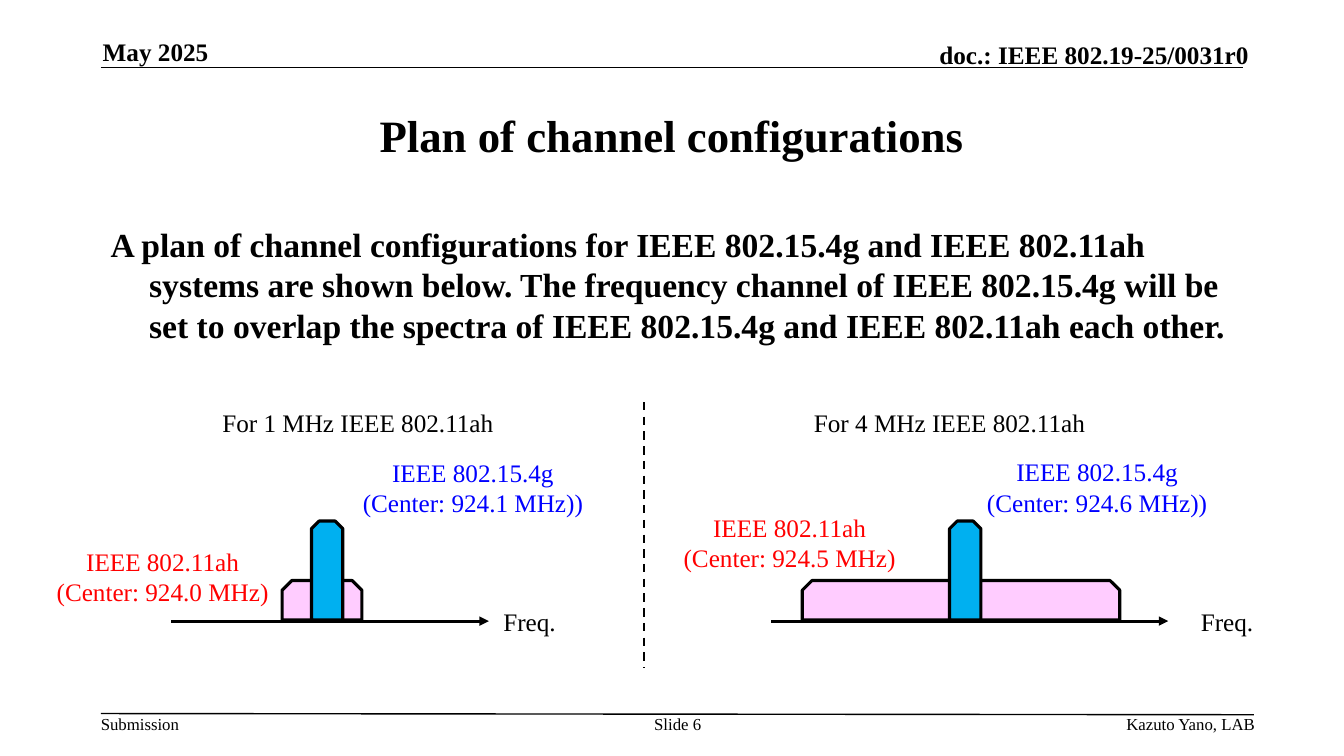
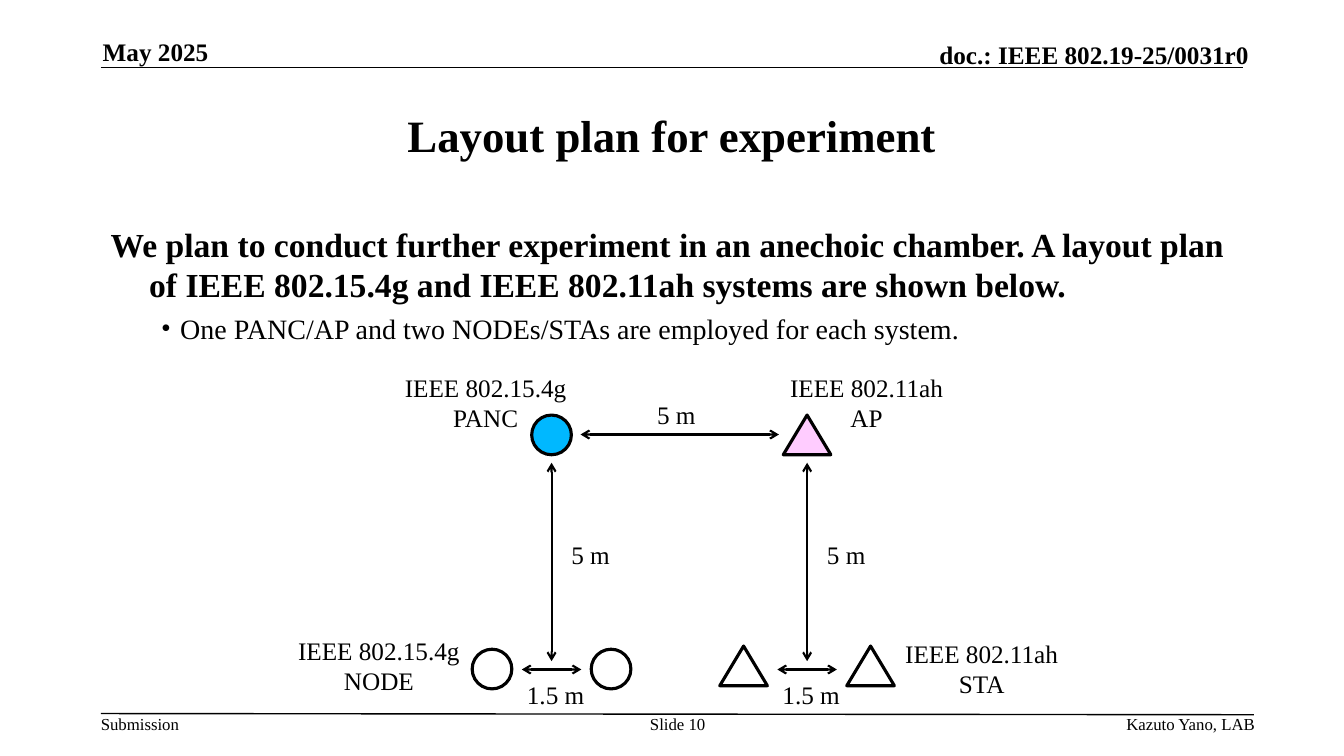
from lxml.etree import SubElement
from pptx import Presentation
from pptx.dml.color import RGBColor
from pptx.enum.dml import MSO_LINE_DASH_STYLE as DASH
from pptx.enum.shapes import MSO_CONNECTOR, MSO_SHAPE
from pptx.enum.text import MSO_ANCHOR as ANCHOR, PP_ALIGN as ALIGN
from pptx.oxml.ns import qn
from pptx.util import Cm, Pt

FONT = "Times New Roman"
BLACK = RGBColor(0x00, 0x00, 0x00)
RED = RGBColor(0xFF, 0x00, 0x00)
BLUE = RGBColor(0x00, 0x00, 0xFF)
PINK = RGBColor(0xFF, 0xCC, 0xFF)
SKY = RGBColor(0x00, 0xB0, 0xF0)
PANC_BLUE = RGBColor(0x00, 0xB8, 0xFF)

WIDTH, HEIGHT = 33.87, 19.05
LEFT, BODY_WIDTH = 2.54, 28.78
LABEL_INSETS = (0.25, 0.13)
LINE_HEIGHT, TWO_LINES = 1.02, 1.8


def format_paragraph(p, text, size=18, bold=False, color=BLACK, align=ALIGN.LEFT,
                     before=0, margin=0, indent=0, bullet=None):
    p.alignment = align
    p.space_before = Pt(before)
    pPr = p._p.get_or_add_pPr()
    pPr.set("marL", str(Cm(margin)))
    pPr.set("indent", str(Cm(indent)))
    if bullet:
        SubElement(pPr, qn("a:buFont")).set("typeface", FONT)
        SubElement(pPr, qn("a:buChar")).set("char", bullet)
    r = p.add_run()
    r.text = text
    r.font.name = FONT
    r.font.size = Pt(size)
    r.font.bold = bold
    r.font.color.rgb = color


def add_text(s, text, x, y, w, h, insets=(0, 0), anchor=ANCHOR.TOP, wrap=True, **style):
    tf = s.shapes.add_textbox(Cm(x), Cm(y), Cm(w), Cm(h)).text_frame
    tf.word_wrap = wrap
    tf.vertical_anchor = anchor
    tf.margin_left = tf.margin_right = Cm(insets[0])
    tf.margin_top = tf.margin_bottom = Cm(insets[1])
    for i, line in enumerate(text.split("\n")):
        p = tf.add_paragraph() if i else tf.paragraphs[0]
        format_paragraph(p, line, **style)
    return tf


def add_label(s, text, x, y, w, color=BLACK, align=ALIGN.CENTER):
    h = TWO_LINES if "\n" in text else LINE_HEIGHT
    add_text(s, text, x, y, w, h, LABEL_INSETS, wrap=False, color=color, align=align)


def add_line(s, x1, y1, x2, y2, width=1.0, dash=None, head=None, tail=None):
    line = s.shapes.add_connector(MSO_CONNECTOR.STRAIGHT, Cm(x1), Cm(y1), Cm(x2), Cm(y2))
    line.line.color.rgb = BLACK
    line.line.width = Pt(width)
    if dash:
        line.line.dash_style = dash
    ln = line.line._get_or_add_ln()
    for tag, kind in (("a:headEnd", head), ("a:tailEnd", tail)):
        if kind:
            SubElement(ln, qn(tag)).set("type", kind)
    SubElement(line._element.spPr, qn("a:effectLst"))


def add_distance(s, x1, y1, x2, y2):
    add_line(s, x1, y1, x2, y2, 1.5, head="arrow", tail="arrow")


def add_outline(s, kind, x, y, w, h, fill=None):
    sp = s.shapes.add_shape(kind, Cm(x), Cm(y), Cm(w), Cm(h))
    sp.shadow.inherit = False
    if fill is None:
        sp.fill.background()
    else:
        sp.fill.solid()
        sp.fill.fore_color.rgb = fill
    sp.line.color.rgb = BLACK
    sp.line.width = Pt(2.25)
    return sp


def add_header(s):
    add_line(s, LEFT, 1.7, 31.32, 1.7)
    add_text(s, "May 2025", 2.59, 0.91, 6.93, 0.76, anchor=ANCHOR.BOTTOM, bold=True)
    add_text(s, "doc.: IEEE 802.19-25/0031r0", 18.52, 0.99, 12.95, 0.76,
             anchor=ANCHOR.BOTTOM, bold=True, align=ALIGN.RIGHT)


def add_footer(s, number):
    y = 17.98
    add_line(s, LEFT, y, 31.6, y + 0.03)
    for text, x, w, align in (("Submission", LEFT, 4, ALIGN.LEFT),
                              (f"Slide {number}", 16.1, 1.96, ALIGN.CENTER),
                              ("Kazuto Yano, LAB", 19.84, 11.79, ALIGN.RIGHT)):
        add_text(s, text, x, y, w, 0.51, size=12, align=align)


def add_base_slide(prs, number, title, body):
    s = prs.slides.add_slide(prs.slide_layouts[6])
    add_header(s)
    add_footer(s, number)
    add_text(s, title, LEFT, 1.91, BODY_WIDTH, 2.95, LABEL_INSETS, ANCHOR.MIDDLE,
             size=32, bold=True, align=ALIGN.CENTER)
    tf = add_text(s, body, LEFT, 5.51, BODY_WIDTH, 2.41, LABEL_INSETS,
                  size=24, bold=True, before=6, margin=0.97, indent=-0.97)
    return s, tf


def add_band(s, x, base, w, h, fill):
    sp = add_outline(s, MSO_SHAPE.SNIP_2_SAME_RECTANGLE, x, base - h, w, h, fill)
    sp.adjustments[0] = 0.246
    sp.adjustments[1] = 0


def add_spectrum(s, x, y, heading, heading_x, axis, freq_x, wide, narrow_x,
                 wide_label, narrow_label):
    base = y + 5.52
    add_label(s, heading, x + heading_x, y, 7.42)
    add_line(s, x + axis[0], base, x + axis[1], base, 2.25, tail="triangle")
    add_label(s, "Freq.", x + freq_x, base - 0.51, 1.85)
    add_band(s, x + wide[0], base - 0.03, wide[1], 0.99, PINK)
    add_band(s, x + narrow_x, base - 0.03, 0.79, 2.49, SKY)
    for (text, dx, dy), w, color in ((wide_label, 5.92, RED), (narrow_label, 6.12, BLUE)):
        add_label(s, text, x + dx, y + dy, w, color)


def build_channels(prs):
    s, _ = add_base_slide(
        prs, 6, "Plan of channel configurations",
        "A plan of channel configurations for IEEE 802.15.4g and IEEE 802.11ah systems "
        "are shown below. The frequency channel of IEEE 802.15.4g will be set to overlap "
        "the spectra of IEEE 802.15.4g and IEEE 802.11ah each other.")
    top = 10.13
    add_spectrum(s, 1.14, top, "For 1 MHz IEEE 802.11ah", 4.17, (3.18, 11.18), 11.28,
                 (5.97, 2.01), 6.71,
                 ("IEEE 802.11ah\n(Center: 924.0 MHz)", 0, 3.51),
                 ("IEEE 802.15.4g\n(Center: 924.1 MHz))", 7.72, 1.27))
    add_spectrum(s, 16.94, top, "For 4 MHz IEEE 802.11ah", 3.28, (2.49, 12.5), 13.06,
                 (3.28, 8), 6.99,
                 ("IEEE 802.11ah\n(Center: 924.5 MHz)", 0, 2.65),
                 ("IEEE 802.15.4g\n(Center: 924.6 MHz))", 7.65, 1.25))
    add_line(s, 16.23, top, 16.23, 16.81, 1.5, dash=DASH.DASH)


def add_system(s, cx, y, kind, width, fill, spread, leaf_y, root_label, leaf_label):
    def add_station(dx, dy, color=None):
        add_outline(s, kind, cx + dx - width / 2, y + dy, width, 1, color)

    add_station(0, 1.21, fill)
    for dx in (-spread, spread):
        add_station(dx, leaf_y)
    add_distance(s, cx, y + 2.41, cx, y + 7.41)
    add_distance(s, cx - 0.75, y + 7.62, cx + 0.75, y + 7.62)
    add_label(s, "5 m", cx + 0.25, y + 4.21, 1.5, align=ALIGN.LEFT)
    add_label(s, "1.5 m", cx - 0.87, y + 7.74, 1.98, align=ALIGN.LEFT)
    for text, dx, dy, w in (root_label, leaf_label):
        add_label(s, text, cx + dx, y + dy, w)


def build_layout(prs):
    s, tf = add_base_slide(
        prs, 10, "Layout plan for experiment",
        "We plan to conduct further experiment in an anechoic chamber. A layout plan of "
        "IEEE 802.15.4g and IEEE 802.11ah systems are shown below.")
    format_paragraph(tf.add_paragraph(),
                     "One PANC/AP and two NODEs/STAs are employed for each system.",
                     size=20, before=5, margin=1.75, indent=-0.48, bullet="•")
    top = 9.25
    add_system(s, 13.9, top, MSO_SHAPE.OVAL, 1, PANC_BLUE, 1.5, 7.11,
               ("IEEE 802.15.4g\nPANC", -3.97, 0, 4.62),
               ("IEEE 802.15.4g\nNODE", -6.66, 6.63, 4.62))
    add_system(s, 20.34, top, MSO_SHAPE.ISOSCELES_TRIANGLE, 1.2, PINK, 1.6, 7.03,
               ("IEEE 802.11ah\nAP", -0.71, 0, 4.42),
               ("IEEE 802.11ah\nSTA", 2.19, 6.7, 4.42))
    add_distance(s, 14.63, top + 1.7, 19.63, top + 1.7)
    add_label(s, "5 m", 16.31, top + 0.68, 1.5, align=ALIGN.LEFT)


def main():
    prs = Presentation()
    prs.slide_width, prs.slide_height = Cm(WIDTH), Cm(HEIGHT)
    build_channels(prs)
    build_layout(prs)
    prs.save("out.pptx")


if __name__ == "__main__":
    main()
